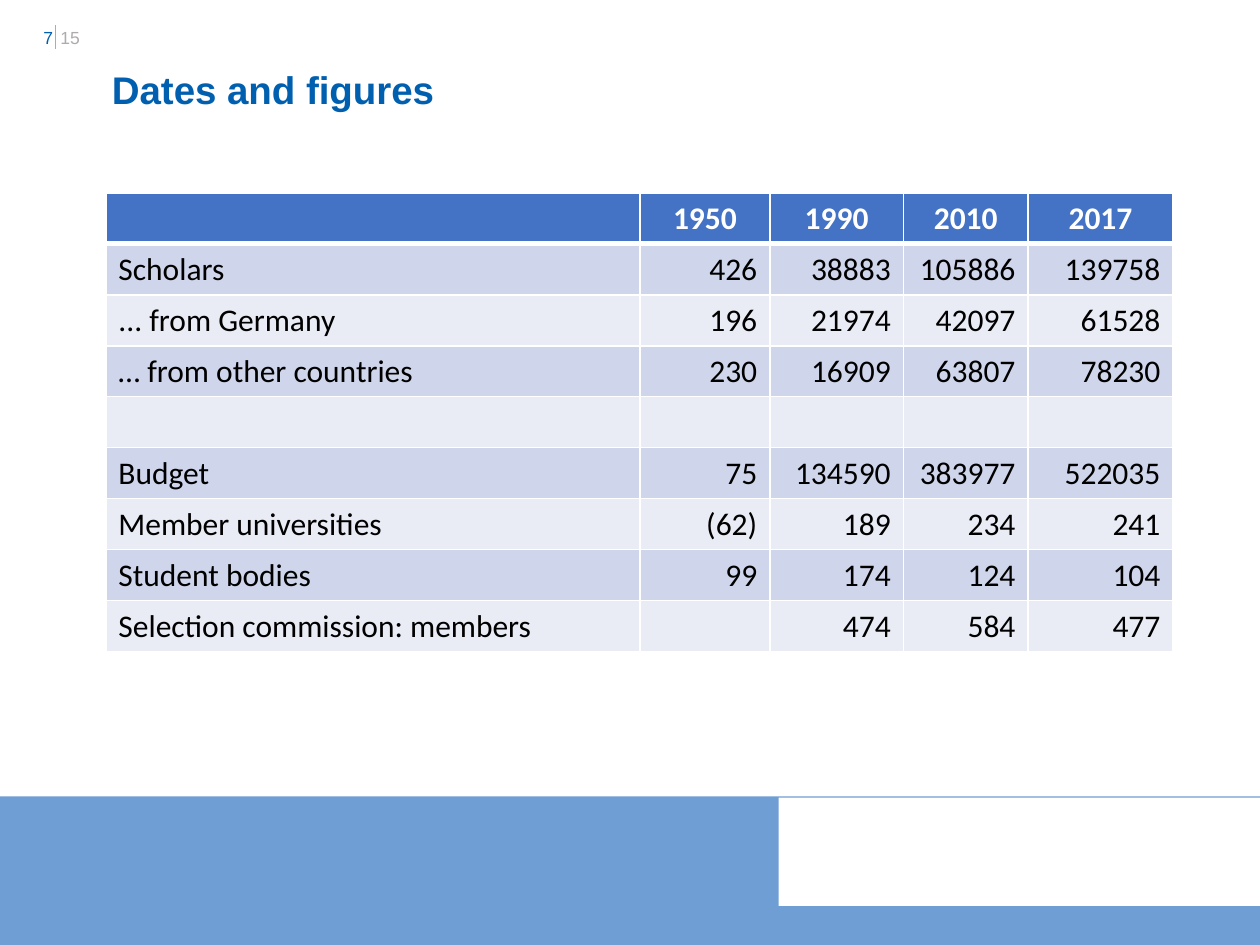
from lxml import etree
from pptx import Presentation, util as u
from pptx.dml.color import RGBColor
from pptx.enum import shapes, text
from pptx.oxml import ns

THEME = {
    "band": "6E9ED4", "white": "FFFFFF", "title": "0060AF", "muted": "AFABAB",
    "header": "4472C4", "body": "000000", "rows": ("E9EBF5", "CFD5EA"),
    "heading_font": "Arial", "table_font": "Calibri",
    "title_size": 22, "table_size": 18, "page_size": 10,
}
LEFT, CENTER, RIGHT = text.PP_ALIGN.LEFT, text.PP_ALIGN.CENTER, text.PP_ALIGN.RIGHT

deck = Presentation()
deck.slide_width, deck.slide_height = u.Inches(10), u.Inches(7.5)
page = deck.slides.add_slide(deck.slide_layouts[6])


def write(para, words, font, size, color, bold=False, align=LEFT):
    para.alignment = align
    span = para.add_run()
    span.text = words
    for name, value in {"name": font, "size": u.Pt(size), "bold": bold}.items():
        setattr(span.font, name, value)
    span.font.color.rgb = RGBColor.from_string(color)


def add_border(cell, side, points):
    line = etree.SubElement(cell._tc.get_or_add_tcPr(), ns.qn(f"a:{side}"), w=str(u.Pt(points)))
    fill = etree.SubElement(line, ns.qn("a:solidFill"))
    etree.SubElement(fill, ns.qn("a:srgbClr"), val=THEME["white"])


# Footer band with its white panel
for area, color in (((0, 6.32, 10, 1.18), "band"), ((6.18, 6.33, 3.82, 0.86), "white")):
    block = page.shapes.add_shape(shapes.MSO_SHAPE.RECTANGLE, *map(u.Inches, area))
    block.shadow.inherit = False
    block.fill.solid()
    block.fill.fore_color.rgb = RGBColor.from_string(THEME[color])
    block.line.fill.background()

# Divider between page number and page count
divider = page.shapes.add_connector(
    shapes.MSO_CONNECTOR.STRAIGHT, *map(u.Inches, (0.44, 0.2, 0.44, 0.39)))
divider.line.width = u.Pt(1)
divider.line.color.rgb = RGBColor.from_string(THEME["muted"])
etree.SubElement(divider._element.spPr, ns.qn("a:effectLst"))

# Page count, page number and title: words, area, size, colour, bold, align, insets, spacing
labels = (
    ("15", (0.48, 0.21, 0.52, 0.2), "page_size", "muted", False, LEFT, (0, 0), 0.9),
    ("7", (0.11, 0.2, 0.31, 0.2), "page_size", "title", False, RIGHT, (0, 0), 1.0),
    ("Dates and figures", (0.79, 0.4, 9.17, 0.66), "title_size", "title", True, LEFT,
     (0.1, 0.05), 0.9),
)
for words, area, size, color, bold, align, (side, edge), spacing in labels:
    box = page.shapes.add_textbox(*map(u.Inches, area))
    frame = box.text_frame
    settings = {
        "word_wrap": True, "vertical_anchor": text.MSO_ANCHOR.MIDDLE,
        "margin_left": u.Inches(side), "margin_right": u.Inches(side),
        "margin_top": u.Inches(edge), "margin_bottom": u.Inches(edge),
    }
    for name, value in settings.items():
        setattr(frame, name, value)
    para = frame.paragraphs[0]
    para.line_spacing = spacing
    write(para, words, THEME["heading_font"], THEME[size], THEME[color], bold, align)

# Table of figures by year
figures = (
    ("", "1950", "1990", "2010", "2017"),
    ("Scholars", "426", "38883", "105886", "139758"),
    ("... from Germany", "196", "21974", "42097", "61528"),
    ("… from other countries", "230", "16909", "63807", "78230"),
    ("", "", "", "", ""),
    ("Budget", "75", "134590", "383977", "522035"),
    ("Member universities", "(62)", "189", "234", "241"),
    ("Student bodies", "99", "174", "124", "104"),
    ("Selection commission: members", "", "474", "584", "477"),
)
widths = (4.24, 1.03, 1.06, 0.99, 1.15)
row_height = 0.405
table = page.shapes.add_table(
    len(figures), len(widths), u.Inches(0.84), u.Inches(1.53),
    u.Inches(sum(widths)), u.Inches(row_height * len(figures))).table
for column, width in zip(table.columns, widths):
    column.width = u.Inches(width)

for r, record in enumerate(figures):
    table.rows[r].height = u.Inches(row_height)
    header = r == 0
    for c, words in enumerate(record):
        cell = table.cell(r, c)
        for side in ("lnL", "lnR", "lnT", "lnB"):
            heavy = (r, side) in ((0, "lnB"), (1, "lnT"))
            add_border(cell, side, 3 if heavy else 1)
        cell.fill.solid()
        cell.fill.fore_color.rgb = RGBColor.from_string(
            THEME["header"] if header else THEME["rows"][r % 2])
        if words:
            align = CENTER if header else RIGHT if c else LEFT
            write(cell.text_frame.paragraphs[0], words, THEME["table_font"],
                  THEME["table_size"], THEME["white" if header else "body"], header, align)

deck.save("out.pptx")
